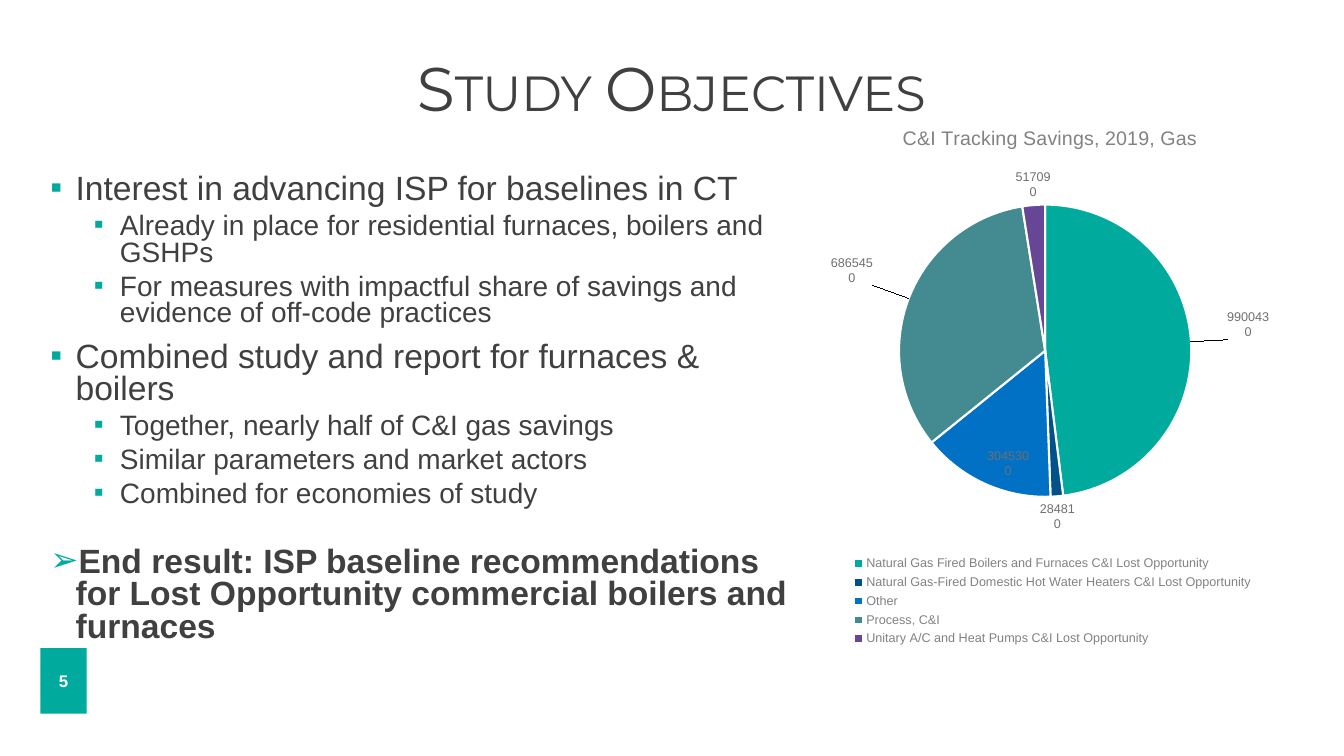
from copy import deepcopy

from lxml import etree
from pptx import Presentation
from pptx.chart.data import CategoryChartData
from pptx.dml.color import RGBColor
from pptx.enum.chart import XL_CHART_TYPE, XL_LABEL_POSITION, XL_LEGEND_POSITION
from pptx.enum.shapes import MSO_SHAPE
from pptx.enum.text import MSO_ANCHOR, MSO_AUTO_SIZE, PP_ALIGN
from pptx.oxml import parse_xml
from pptx.oxml.ns import nsdecls, qn
from pptx.util import Pt

TEAL = RGBColor(0x00, 0xAA, 0x9D)
NAVY = RGBColor(0x00, 0x50, 0x89)
BLUE = RGBColor(0x00, 0x71, 0xC5)
SLATE = RGBColor(0x44, 0x8A, 0x91)
PURPLE = RGBColor(0x67, 0x46, 0x95)
INK = RGBColor(0x40, 0x40, 0x41)
GRAY = RGBColor(0x82, 0x82, 0x84)
LABEL_GRAY = RGBColor(0x6F, 0x6F, 0x71)
WHITE = RGBColor(0xFF, 0xFF, 0xFF)
CENTER, TOP, MIDDLE = PP_ALIGN.CENTER, MSO_ANCHOR.TOP, MSO_ANCHOR.MIDDLE
OUTSIDE_END = XL_LABEL_POSITION.OUTSIDE_END

TITLE = "Study Objectives"
PAGE_NUMBER = "5"

# Style: level, size, bold, space before, left margin, hanging indent, bullet
MAIN = (0, 24, False, 10, 18, 18, "▪")
DETAIL = (1, 20, False, 5, 49.7, 18.7, "▪")
RESULT = (0, 24, True, 28, 18, 18, "➢")
OBJECTIVES = [
    (MAIN, "Interest in advancing ISP for baselines in CT"),
    (DETAIL, "Already in place for residential furnaces, boilers and GSHPs"),
    (DETAIL, "For measures with impactful share of savings and evidence of off-code practices"),
    (MAIN, "Combined study and report for furnaces & boilers"),
    (DETAIL, "Together, nearly half of C&I gas savings"),
    (DETAIL, "Similar parameters and market actors"),
    (DETAIL, "Combined for economies of study"),
    (RESULT, "End result: ISP baseline recommendations for Lost Opportunity "
             "commercial boilers and furnaces"),
]

CHART_TITLE = "C&I Tracking Savings, 2019, Gas"
SAVINGS = [
    ("Natural Gas Fired Boilers and Furnaces C&I Lost Opportunity", 990043, TEAL),
    ("Natural Gas-Fired Domestic Hot Water Heaters C&I Lost Opportunity", 28481, NAVY),
    ("Other", 304530, BLUE),
    ("Process, C&I", 686545, SLATE),
    ("Unitary A/C and Heat Pumps C&I Lost Opportunity", 51709, PURPLE),
]
# Slice index: label offset as a share of the chart, label position
MOVED_LABELS = {0: (0.06, -0.03, "outEnd"), 2: (0, 0, "inEnd"), 3: (-0.06, -0.02, "outEnd")}


def place(shape, left, top, width, height):
    shape.left, shape.top, shape.width, shape.height = map(Pt, (left, top, width, height))


def set_font(font, size, color, name="Arial", bold=False):
    font.size, font.name, font.bold = Pt(size), name, bold
    font.color.rgb = color


def add_bullet(paragraph, margin, hanging, character):
    properties = paragraph._p.get_or_add_pPr()
    properties.set("marL", str(Pt(margin)))
    properties.set("indent", str(-Pt(hanging)))
    color = etree.SubElement(properties, qn("a:buClr"))
    etree.SubElement(color, qn("a:srgbClr")).set("val", str(TEAL))
    etree.SubElement(properties, qn("a:buFont")).set("typeface", "Arial")
    etree.SubElement(properties, qn("a:buChar")).set("char", character)


def layout_xml(x, y, width=None, height=None, inner=False):
    """Manual chart layout, in shares of the chart's size."""
    target = '<c:layoutTarget val="inner"/>' if inner else ""
    modes = '<c:xMode val="edge"/><c:yMode val="edge"/>' if width or y > 0 else ""
    size = f'<c:w val="{width}"/><c:h val="{height}"/>' if width else ""
    return parse_xml(
        f'<c:layout {nsdecls("c")}><c:manualLayout>{target}{modes}'
        f'<c:x val="{x}"/><c:y val="{y}"/>{size}</c:manualLayout></c:layout>')


def set_layout(element, layout, after):
    """Put the layout right after the named child, or first if there is none."""
    for old in element.findall(qn("c:layout")):
        element.remove(old)
    anchor = element.find(qn(after)) if after else None
    if anchor is None:
        element.insert(0, layout)
    else:
        anchor.addnext(layout)


def add_title(slide):
    title = slide.shapes.title
    place(title, 28.8, 38.2, 901.4, 73.4)
    frame = title.text_frame
    frame.text = TITLE
    frame.auto_size, frame.vertical_anchor = MSO_AUTO_SIZE.NONE, TOP
    paragraph = frame.paragraphs[0]
    paragraph.alignment, paragraph.line_spacing = CENTER, 0.9
    set_font(paragraph.font, 44, INK, "Montserrat")
    paragraph.runs[0].font._element.set("cap", "small")


def add_objectives(slide):
    body = slide.placeholders[1]
    place(body, 28.8, 121, 541.4, 363.6)
    frame = body.text_frame
    frame.auto_size, frame.vertical_anchor = MSO_AUTO_SIZE.NONE, TOP
    for index, (style, text) in enumerate(OBJECTIVES):
        level, size, bold, before, margin, hanging, character = style
        paragraph = frame.add_paragraph() if index else frame.paragraphs[0]
        paragraph.text, paragraph.level = text, level
        paragraph.line_spacing = 0.8
        paragraph.space_before = Pt(before if index else 0)
        add_bullet(paragraph, margin, hanging, character)
        set_font(paragraph.font, size, INK, bold=bold)


def add_page_number(slide):
    box = slide.shapes.add_shape(MSO_SHAPE.RECTANGLE, Pt(28.8), Pt(463), Pt(33.1), Pt(46.8))
    box.shadow.inherit = False
    box.fill.solid()
    box.fill.fore_color.rgb = TEAL
    box.line.fill.background()
    box.text_frame.text = PAGE_NUMBER
    box.text_frame.vertical_anchor = MIDDLE
    paragraph = box.text_frame.paragraphs[0]
    paragraph.alignment = CENTER
    set_font(paragraph.font, 12, WHITE, bold=True)


def add_slice_labels(series):
    labels = series.data_labels
    labels.show_value = labels.show_percentage = True
    labels.number_format, labels.number_format_is_linked = "#,##0", False
    labels.position = OUTSIDE_END
    set_font(labels.font, 9, LABEL_GRAY)
    element = labels._element
    separator = etree.Element(qn("c:separator"))
    separator.text = "\n"
    element.find(qn("c:showBubbleSize")).addnext(separator)
    shared = [child for child in element if child.tag != qn("c:showLeaderLines")]
    for position, (index, (x, y, side)) in enumerate(MOVED_LABELS.items()):
        label = etree.Element(qn("c:dLbl"))
        etree.SubElement(label, qn("c:idx")).set("val", str(index))
        if x or y:
            label.append(layout_xml(x, y))
        label.extend(deepcopy(shared))
        label.find(qn("c:dLblPos")).set("val", side)
        element.insert(position, label)


def add_savings_chart(slide):
    data = CategoryChartData()
    data.categories = [name for name, _, _ in SAVINGS]
    data.add_series("Series 1", [value for _, value, _ in SAVINGS])
    chart = slide.shapes.add_chart(
        XL_CHART_TYPE.PIE, Pt(570.2), Pt(75.6), Pt(360), Pt(388.8), data).chart
    set_font(chart.font, 10, INK)
    chart.has_title = True
    chart.chart_title.text_frame.text = CHART_TITLE
    set_font(chart.chart_title.text_frame.paragraphs[0].font, 14, GRAY)
    set_layout(chart.chart_title._element, layout_xml(0.2, 0.03), "c:tx")

    chart.has_legend = True
    chart.legend.position = XL_LEGEND_POSITION.BOTTOM
    chart.legend.include_in_layout = False
    set_font(chart.legend.font, 9, GRAY)
    set_layout(chart.legend._element, layout_xml(0.09, 0.82, 0.83, 0.18), "c:legendPos")

    plot = chart.plots[0]
    plot.vary_by_categories = True
    set_layout(plot._element.getparent(), layout_xml(0.2, 0.18, 0.58, 0.54, inner=True), None)
    series = plot.series[0]
    for index, (_, _, color) in enumerate(SAVINGS):
        pie_slice = series.points[index].format
        pie_slice.fill.solid()
        pie_slice.fill.fore_color.rgb = color
        pie_slice.line.color.rgb = WHITE
        pie_slice.line.width = Pt(1.5)
    add_slice_labels(series)


def main():
    presentation = Presentation()
    presentation.slide_width, presentation.slide_height = Pt(960), Pt(540)
    slide = presentation.slides.add_slide(presentation.slide_layouts[1])
    add_title(slide)
    add_objectives(slide)
    add_page_number(slide)
    add_savings_chart(slide)
    presentation.save("out.pptx")


if __name__ == "__main__":
    main()
